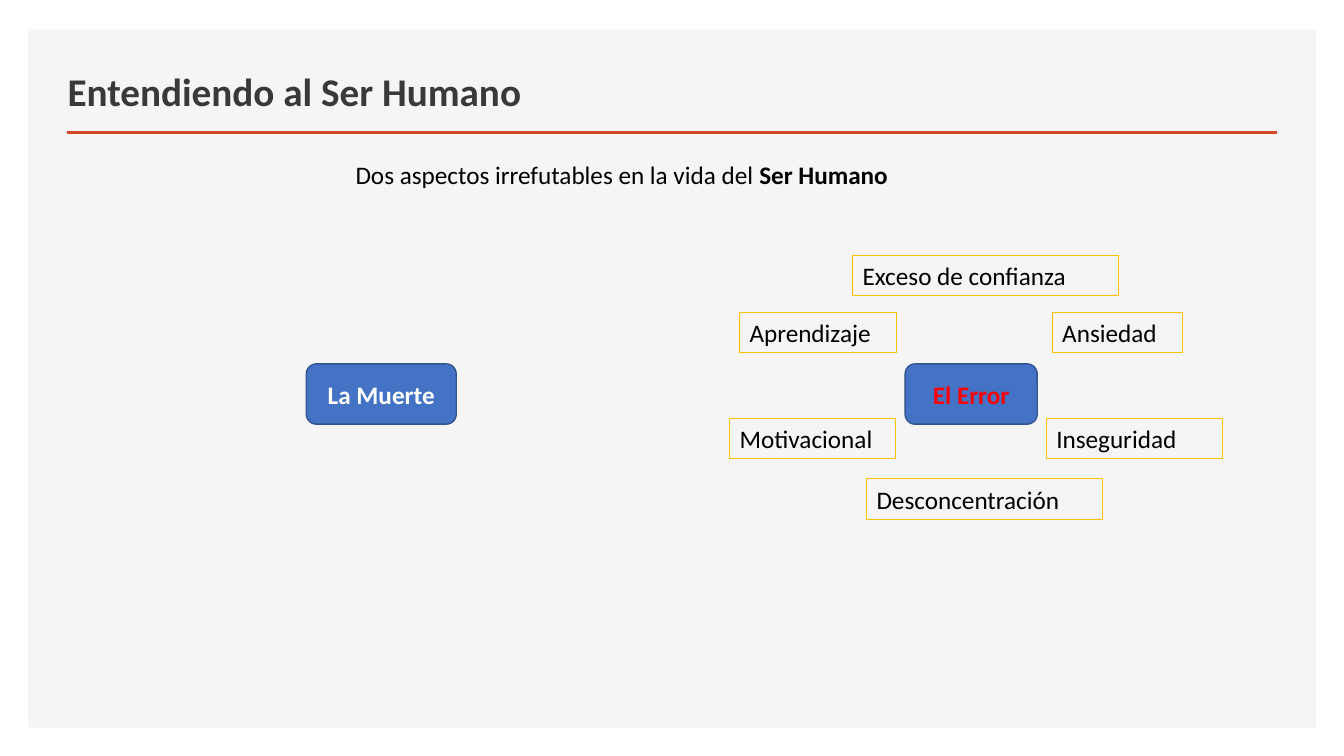
from lxml import etree
from pptx import Presentation
from pptx.dml.color import RGBColor
from pptx.enum.shapes import MSO_CONNECTOR, MSO_SHAPE
from pptx.enum.text import MSO_ANCHOR, PP_ALIGN
from pptx.oxml.ns import qn
from pptx.util import Cm, Pt

RECTANGLE, ROUNDED = MSO_SHAPE.RECTANGLE, MSO_SHAPE.ROUNDED_RECTANGLE
STRAIGHT = MSO_CONNECTOR.STRAIGHT
MIDDLE, BOTTOM = MSO_ANCHOR.MIDDLE, MSO_ANCHOR.BOTTOM
CENTER, LEFT = PP_ALIGN.CENTER, PP_ALIGN.LEFT

FONT = "Calibri"
BLACK, WHITE, RED = "000000", "FFFFFF", "FF0000"
TITLE_GREY, PANEL_GREY = "3B3838", "F5F5F5"
BLUE, DARK_BLUE, AMBER, ORANGE = "4472C4", "325491", "FFC000", "D24726"
LABEL_HEIGHT, CORE_HEIGHT = 1.02, 1.52

# Left, top and width in cm, measured from the corner of the error map
FACTORS = [
    ("Motivacional", 0, 4.11, 4.19),
    ("Aprendizaje", 0.25, 1.44, 3.96),
    ("Desconcentración", 3.45, 5.64, 5.94),
    ("Exceso de confianza", 3.1, 0, 6.71),
    ("Ansiedad", 8.13, 1.44, 3.28),
    ("Inseguridad", 7.98, 4.11, 4.45),
]


def rgb(color):
    return RGBColor.from_string(color)


def format_run(run, size, color, bold=False):
    run.font.name = FONT
    run.font.size = Pt(size)
    run.font.color.rgb = rgb(color)
    run.font.bold = bold


def add_box(slide, form, box, fill=None, line=None, line_width=0.75):
    """Draw a shape in box (left, top, width, height in cm)."""
    shape = slide.shapes.add_shape(form, *map(Cm, box))
    shape.shadow.inherit = False
    if fill:
        shape.fill.solid()
        shape.fill.fore_color.rgb = rgb(fill)
    else:
        shape.fill.background()
    if line:
        shape.line.color.rgb = rgb(line)
        shape.line.width = Pt(line_width)
    else:
        shape.line.fill.background()
    return shape


def write_label(shape, text, color, align, bold=False):
    frame = shape.text_frame
    frame.word_wrap = True
    frame.vertical_anchor = MIDDLE
    frame.text = text
    paragraph = frame.paragraphs[0]
    paragraph.alignment = align
    format_run(paragraph.runs[0], 18, color, bold)


def add_core(slide, text, box, color):
    core = add_box(slide, ROUNDED, box, BLUE, DARK_BLUE, 1)
    write_label(core, text, color, CENTER, bold=True)


def add_background(slide, left, top, width, height):
    add_box(slide, RECTANGLE, (left, top, width, height), PANEL_GREY)
    rule_y = Cm(top + 2.59)
    rule = slide.shapes.add_connector(
        STRAIGHT, Cm(left + 0.97), rule_y, Cm(left + width - 0.99), rule_y)
    rule.line.color.rgb = rgb(ORANGE)
    rule.line.width = Pt(2)
    etree.SubElement(rule.line._get_or_add_ln().getparent(), qn("a:effectLst"))


def fill_title(slide, left, top, width, height):
    title = slide.shapes.title
    title.left, title.top = Cm(left), Cm(top)
    title.width, title.height = Cm(width), Cm(height)
    frame = title.text_frame
    frame.text = "Entendiendo al Ser Humano"
    frame.vertical_anchor = BOTTOM
    heading = frame.paragraphs[0]
    heading.alignment = LEFT
    heading.line_spacing = 0.9
    format_run(heading.runs[0], 28, TITLE_GREY, bold=True)


def add_statement(slide, left, top, width, height):
    statement = slide.shapes.add_textbox(*map(Cm, (left, top, width, height)))
    statement.text_frame.word_wrap = False
    paragraph = statement.text_frame.paragraphs[0]
    for text, bold in (("Dos aspectos irrefutables en la vida del ", False),
                       ("Ser Humano", True)):
        run = paragraph.add_run()
        run.text = text
        format_run(run, 18, BLACK, bold)


def add_error_map(slide, left, top):
    """Place the error and the factors around it."""
    add_core(slide, "El Error", (left + 4.42, top + 2.74, 3.33, CORE_HEIGHT), RED)
    for text, x, y, width in FACTORS:
        factor = add_box(slide, RECTANGLE,
                         (left + x, top + y, width, LABEL_HEIGHT), line=AMBER)
        write_label(factor, text, BLACK, LEFT)


def main():
    presentation = Presentation()
    presentation.slide_width, presentation.slide_height = Cm(33.87), Cm(19.05)
    slide = presentation.slides.add_slide(presentation.slide_layouts[5])
    add_background(slide, 0.71, 0.74, 32.46, 17.6)
    fill_title(slide, 1.45, 1.24, 20.8, 1.78)
    # The title has to lie in front of the background panel
    slide.shapes._spTree.append(slide.shapes.title._element)
    add_statement(slide, 8.71, 3.89, 14.66, LABEL_HEIGHT)
    add_core(slide, "La Muerte", (7.72, 9.17, 3.78, CORE_HEIGHT), WHITE)
    add_error_map(slide, 18.39, 6.43)
    presentation.save("out.pptx")


if __name__ == "__main__":
    main()
